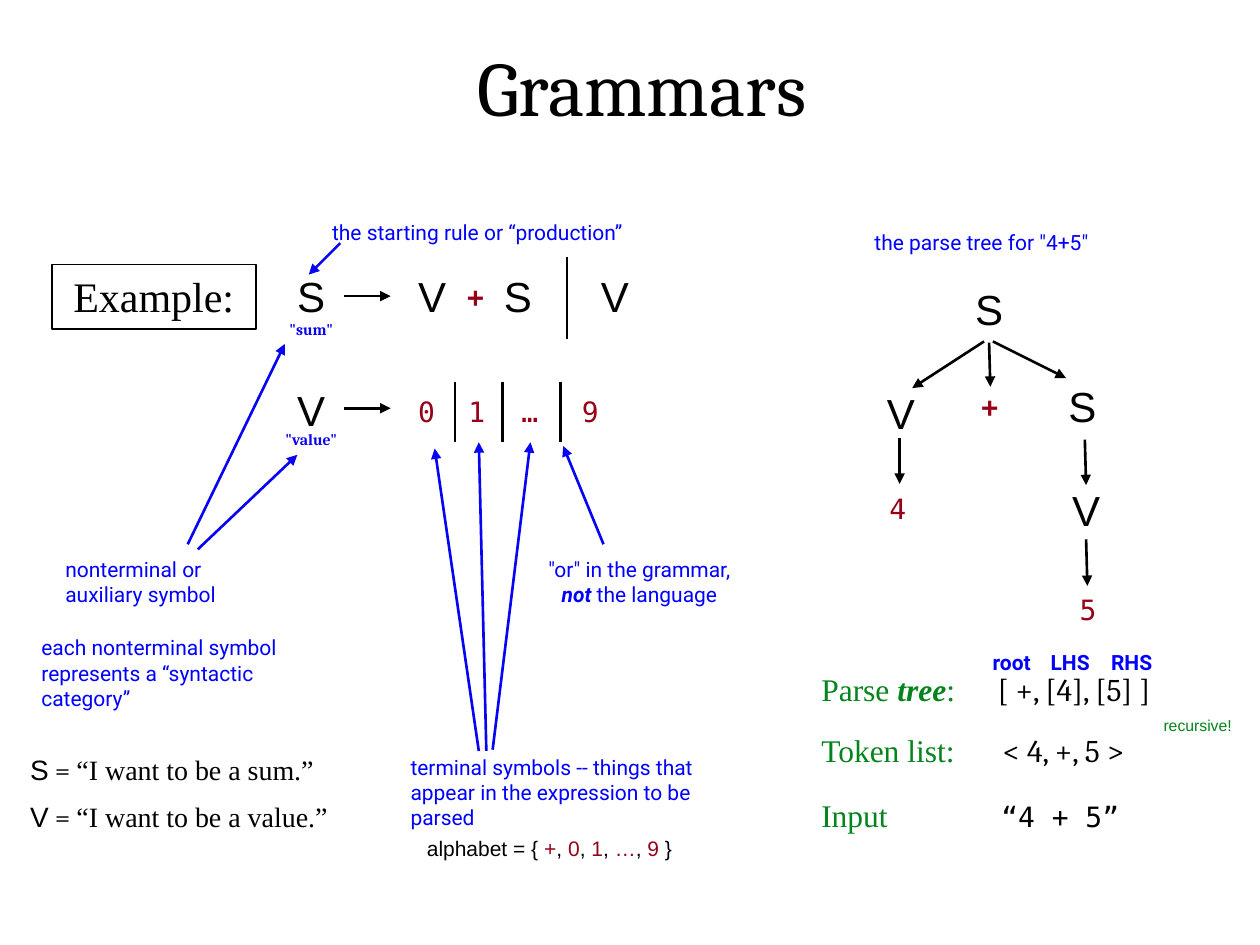
from lxml.etree import SubElement
from pptx import Presentation
from pptx.dml.color import RGBColor
from pptx.enum.shapes import MSO_CONNECTOR as Connector, MSO_SHAPE as Shape
from pptx.enum.text import MSO_ANCHOR as Anchor, MSO_AUTO_SIZE as AutoSize, PP_ALIGN as Align
from pptx.oxml.ns import qn
from pptx.util import Pt

PX = 9144  # 100 px to the inch
COLORS = {"black": "000000", "blue": "0000FF", "ink": "0703F3",
          "red": "960117", "green": "04841C"}
SANS, SERIF, TIMES = "Arial", "Cambria", "Times New Roman"
MONO, NOTE = "DejaVu Sans Mono", "Roboto"

deck = Presentation()
deck.slide_width, deck.slide_height = 1000 * PX, 750 * PX
page = deck.slides.add_slide(deck.slide_layouts[5])


def write(place, content, size, face, color, bold=None, align=Align.LEFT, box=None):
    """Fill a box with one paragraph: a string, or (text, font settings) spans."""
    x, y, w, h = (n * PX for n in place)
    if box is None:
        box = page.shapes.add_textbox(x, y, w, h)
    box.left, box.top, box.width, box.height = x, y, w, h
    spans = [(content, {})] if isinstance(content, str) else content
    frame = box.text_frame
    frame.auto_size = AutoSize.NONE
    frame.vertical_anchor = Anchor.TOP
    frame.word_wrap = any(" " in text for text, _ in spans)
    para = frame.paragraphs[0]
    para.alignment = align
    para.font.size, para.font.name, para.font.bold = Pt(size), face, bold
    para.font.color.rgb = RGBColor.from_string(COLORS[color])
    for text, settings in spans:
        span = para.add_run()
        span.text = text
        for key, value in settings.items():
            if key == "color":
                span.font.color.rgb = RGBColor.from_string(COLORS[value])
            else:
                setattr(span.font, key, value)
    return para


def draw_line(x1, y1, x2, y2, color="black", arrow=True):
    line = page.shapes.add_connector(Connector.STRAIGHT, x1 * PX, y1 * PX, x2 * PX, y2 * PX)
    line.line.color.rgb = RGBColor.from_string(COLORS[color])
    line.line.width = Pt(1.5)
    if arrow:
        SubElement(line.line._get_or_add_ln(), qn("a:tailEnd"), type="triangle")
    SubElement(line._element.spPr, qn("a:effectLst"))


# Title and example label
write((84, 26, 851, 83), "Grammars", 44, SERIF, "black", align=Align.CENTER,
      box=page.shapes.title)
label = page.shapes.add_shape(Shape.RECTANGLE, 0, 0, PX, PX)
label.shadow.inherit = False
label.fill.background()
label.line.color.rgb = RGBColor.from_string(COLORS["black"])
label.line.width = Pt(1)
write((41, 210, 162, 51), "Example:", 24, TIMES, "black", align=Align.CENTER, box=label)

# Nonterminals and terminals of the rules and the parse tree
for symbol, x, y in [("S", 226, 210), ("V", 322, 210), ("S", 390, 210), ("V", 467, 210),
                     ("V", 226, 300), ("S", 764, 220), ("V", 694, 303), ("S", 838, 297),
                     ("V", 841, 380)]:
    write((x, y, 42, 50), symbol, 24, SANS, "black")
for symbol, x, y in [("+", 361, 217), ("0", 322, 308), ("1", 362, 308), ("…", 404, 308),
                     ("9", 452, 308), ("+", 769, 304), ("4", 696, 385), ("5", 847, 465)]:
    write((x, y, 34, 37), symbol, 16, MONO, "red", bold=symbol == "+")

# Rule arrows, "or" bars and tree branches
for y in (235, 324):
    draw_line(273, y, 310, y)
for x, top, bottom in [(450, 204, 269), (361, 303, 351), (399, 303, 351), (445, 303, 351)]:
    draw_line(x, top, x, bottom, arrow=False)
for ends in [(781, 271, 724, 308), (785, 272, 786, 307), (788, 271, 846, 300),
             (714, 348, 714, 384), (861, 349, 862, 385), (862, 428, 863, 465)]:
    draw_line(*ends)

# Pointers from the notes
for ends in [(270, 193, 245, 218), (149, 432, 226, 273), (157, 436, 236, 361),
             (380, 596, 345, 356), (386, 596, 380, 351), (391, 595, 421, 351),
             (479, 432, 447, 354)]:
    draw_line(*ends, color="ink")

# Notes
emphasis = {"bold": True, "italic": True}
for place, content, align in [
    ((42, 437, 189, 50), "nonterminal or auxiliary symbol", Align.LEFT),
    ((23, 499, 238, 70), "each nonterminal symbol represents a “syntactic category”", Align.LEFT),
    ((316, 594, 261, 70),
     "terminal symbols -- things that appear in the expression to be parsed", Align.LEFT),
    ((250, 169, 258, 30), "the starting rule or “production”", Align.CENTER),
    ((650, 177, 258, 30), 'the parse tree for "4+5"', Align.CENTER),
    ((415, 437, 185, 50),
     [('"or" in the grammar, ', {}), ("not", emphasis), (" the language", {})], Align.CENTER),
]:
    write(place, content, 12, NOTE, "blue", align=align)
for caption, y in [('"sum"', 252), ('"value"', 339)]:
    para = write((205, y, 84, 22), caption, 9, SERIF, "ink", bold=True, align=Align.CENTER)
    para.line_spacing = 0.8
for part, x in [("root", 778), ("LHS", 824), ("RHS", 872)]:
    write((x, 511, 54, 30), part, 12, NOTE, "blue", bold=True)
write((910, 563, 81, 25), "recursive!", 9, SANS, "green", align=Align.CENTER)

# Alphabet
alphabet = [("alphabet = { ", {})]
for symbol in "+01…9":
    alphabet += [(symbol, {"color": "red"}), (" }" if symbol == "9" else ", ", {})]
write((322, 658, 228, 30), alphabet, 12, SANS, "black", align=Align.CENTER)

# Readings of the nonterminals
for symbol, meaning, y in [("S", "“I want to be a sum.”", 592),
                           ("V", "“I want to be a value.”", 630)]:
    write((14, y, 295, 38), [(symbol, {"name": SANS}), (" = ", {"name": SERIF}),
                             (meaning, {})], 16, TIMES, "black")

# Stages from input to tree, with the value at a tab stop
serif_value = {"name": SERIF, "color": "black"}
mono_value = {"name": MONO, "color": "black", "size": Pt(16)}
for y, stop, spans in [
    (527, 140, [("Parse ", {}), ("tree", emphasis), (":\t", {}),
                ("[ +, [4], [5] ]", serif_value)]),
    (575, 144, [("Token list:\t", {}), ("< 4, +, 5 >", serif_value)]),
    (627, 143, [("Input\t", {}), ("“4 + 5”", mono_value)]),
]:
    para = write((642, y, 316, 40), spans, 18, TIMES, "green")
    tabs = para._p.get_or_add_pPr()
    tab_list = tabs.makeelement(qn("a:tabLst"))
    tabs.insert(0, tab_list)
    SubElement(tab_list, qn("a:tab"), pos=str(stop * PX), algn="l")

deck.save("out.pptx")
